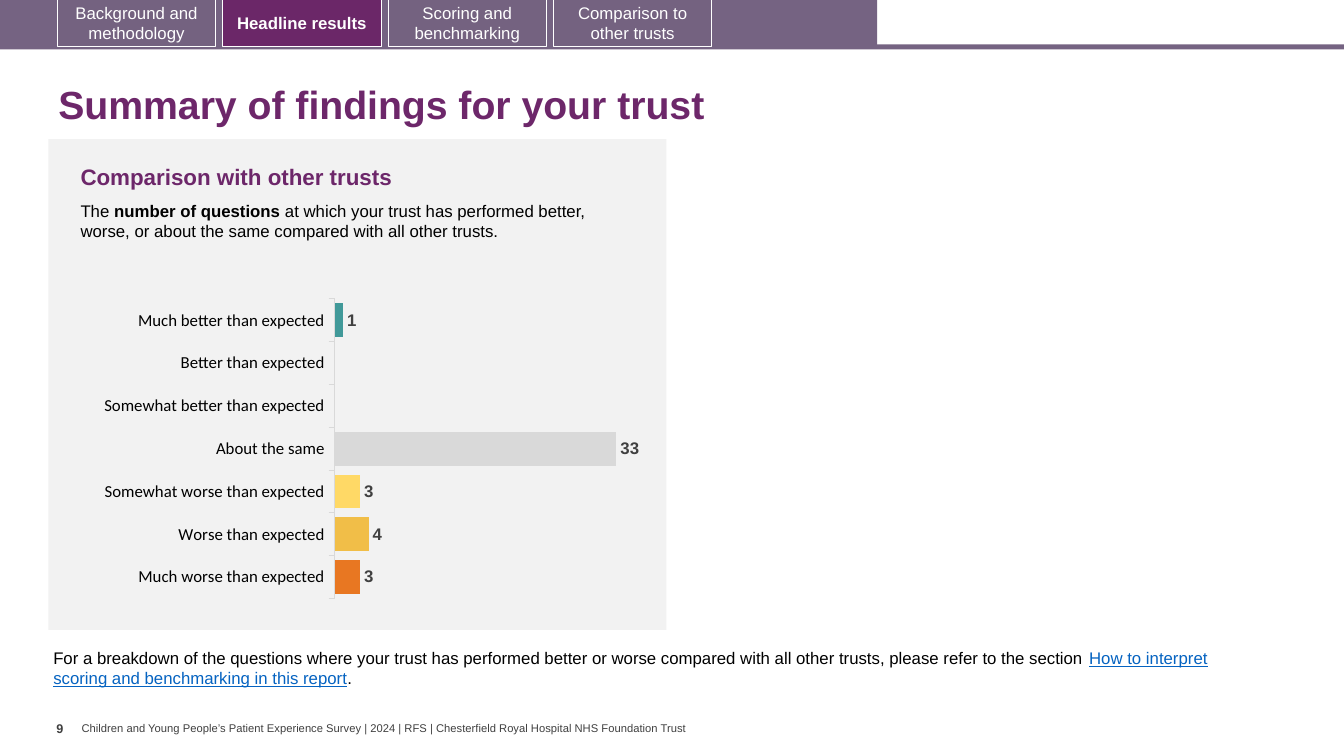
from dataclasses import dataclass

from lxml.etree import SubElement
from pptx import Presentation
from pptx.chart.data import CategoryChartData
from pptx.dml.color import RGBColor
from pptx.enum.chart import XL_CHART_TYPE, XL_LABEL_POSITION, XL_TICK_LABEL_POSITION, XL_TICK_MARK
from pptx.enum.shapes import MSO_SHAPE
from pptx.enum.text import MSO_ANCHOR, PP_ALIGN
from pptx.oxml.ns import qn
from pptx.util import Inches, Pt


@dataclass(frozen=True)
class Theme:
    font: str = "Arial"
    chart_font: str = "Calibri"
    title: int = 28
    heading: int = 16
    body: int = 12
    page: int = 9
    footer: int = 8
    purple: str = "6D276A"
    band: str = "756382"
    tab: str = "746280"
    active_tab: str = "6B2768"
    panel: str = "F2F2F2"
    white: str = "FFFFFF"
    black: str = "000000"
    grey: str = "404040"
    axis: str = "D9D9D9"
    link: str = "0563C1"


T = Theme()

TABS = ["Background and methodology", "Headline results",
        "Scoring and benchmarking", "Comparison to other trusts"]
ACTIVE_TAB = "Headline results"

RESULTS = [
    ("Much better than expected", 1, "419999"),
    ("Better than expected", None, "5FBD83"),
    ("Somewhat better than expected", None, "A9D18E"),
    ("About the same", 33, "D9D9D9"),
    ("Somewhat worse than expected", 3, "FFD966"),
    ("Worse than expected", 4, "F1BE48"),
    ("Much worse than expected", 3, "E87722"),
]


def rgb(code):
    return RGBColor.from_string(code)


def set_font(font, size, color=T.black, name=T.font, **more):
    for key, value in dict(size=Pt(size), name=name, **more).items():
        setattr(font, key, value)
    font.color.rgb = rgb(color)


def write(tf, runs, size, color=T.black, **frame):
    """Fill a frame with one paragraph of (text, font values) runs."""
    for key, value in dict(word_wrap=True, **frame).items():
        setattr(tf, key, value)
    p = tf.paragraphs[0]
    for text, values in runs:
        r = p.add_run()
        r.text = text
        set_font(r.font, size, **{"color": color, **values})
    return p


def add_text(s, box, runs, size, color=T.black, **frame):
    tb = s.shapes.add_textbox(*map(Inches, box))
    return write(tb.text_frame, runs, size, color, **frame)


def add_rect(s, box, fill, line=None):
    sp = s.shapes.add_shape(MSO_SHAPE.RECTANGLE, *map(Inches, box))
    sp.shadow.inherit = False
    sp.fill.solid()
    sp.fill.fore_color.rgb = rgb(fill)
    if line:
        sp.line.color.rgb = rgb(line)
        sp.line.width = Pt(0.75)
    else:
        sp.line.fill.background()
    return sp


def add_navigation(s, x, y, w, h):
    add_rect(s, (x, y + h - 0.05, w, 0.05), T.band)
    add_rect(s, (x, y, 8.7, 0.47), T.band)
    for i, label in enumerate(TABS):
        active = label == ACTIVE_TAB
        tab = add_rect(s, (x + 0.57 + 1.64 * i, y - 0.01, 1.57, 0.47),
                       T.active_tab if active else T.tab, T.white)
        p = write(tab.text_frame, [(label, {"bold": active})], T.body, T.white,
                  vertical_anchor=MSO_ANCHOR.MIDDLE)
        p.alignment = PP_ALIGN.CENTER


def add_title(s, box):
    p = add_text(s, box, [("Summary of findings for your trust", {"bold": True})],
                 T.title, T.purple, vertical_anchor=MSO_ANCHOR.MIDDLE)
    p.line_spacing = 0.9


def set_plot_layout(chart, **fractions):
    """Place the inner plot area by fractions of the chart."""
    area = chart._chartSpace.chart.plotArea
    for old in area.findall(qn("c:layout")):
        area.remove(old)
    layout = SubElement(area, qn("c:layout"))
    area.insert(0, layout)
    manual = SubElement(layout, qn("c:manualLayout"))
    values = {"layoutTarget": "inner", "xMode": "edge", "yMode": "edge", **fractions}
    for tag, value in values.items():
        SubElement(manual, qn(f"c:{tag}")).set("val", str(value))


def add_results_chart(s, box):
    data = CategoryChartData()
    data.categories = [name for name, _, _ in RESULTS]
    data.add_series("Series 1", [value for _, value, _ in RESULTS])
    chart = s.shapes.add_chart(XL_CHART_TYPE.BAR_CLUSTERED, *map(Inches, box), data).chart
    chart.has_legend = False
    chart.has_title = False
    set_font(chart.font, 10, name=T.chart_font)
    set_plot_layout(chart, x=0.467, y=0.072, w=0.476, h=0.872)

    cat = chart.category_axis
    cat.reverse_order = True
    cat.major_tick_mark = XL_TICK_MARK.OUTSIDE
    cat.tick_label_position = XL_TICK_LABEL_POSITION.LOW
    cat.format.line.color.rgb = rgb(T.axis)
    cat.format.line.width = Pt(0.75)
    set_font(cat.tick_labels.font, T.body, name=T.chart_font)

    val = chart.value_axis
    for key, value in dict(visible=False, has_major_gridlines=False,
                           minimum_scale=0, maximum_scale=35).items():
        setattr(val, key, value)

    plot = chart.plots[0]
    plot.gap_width = 27
    plot.vary_by_categories = False
    series = plot.series[0]
    series.invert_if_negative = False
    for i, (_, _, color) in enumerate(RESULTS):
        fill = series.points[i].format.fill
        fill.solid()
        fill.fore_color.rgb = rgb(color)
    labels = series.data_labels
    labels.show_value = True
    labels.position = XL_LABEL_POSITION.OUTSIDE_END
    set_font(labels.font, T.body, T.grey, bold=True)


def add_comparison_panel(s, x, y, w, h):
    add_rect(s, (x, y, w, h), T.panel)
    add_text(s, (x + 0.22, y + 0.19, 5.52, 0.37),
             [("Comparison with other trusts", {"bold": True})], T.heading, T.purple)
    add_text(s, (x + 0.22, y + 0.56, 5.29, 0.71), [
        ("The ", {}),
        ("number of questions ", {"bold": True}),
        ("at which your trust has performed better, worse, or about the same "
         "compared with all other trusts.", {}),
    ], T.body)
    add_results_chart(s, (x - 0.07, y + 1.34, w + 0.1, 3.41))


def add_reference(s, box):
    add_text(s, box, [
        ("For a breakdown of the questions where your trust has performed better or worse "
         "compared with all other trusts, please refer to the section ", {}),
        ("How to interpret scoring and benchmarking in this report",
         {"color": T.link, "underline": True}),
        (".", {}),
    ], T.body)


def add_footer(s, x, y):
    add_text(s, (x, y, 0.25, 0.4), [("9", {"bold": True})], T.page, T.grey,
             margin_left=0, margin_right=0)
    add_text(s, (x + 0.25, y + 0.06, 6.09, 0.13),
             [("Children and Young People’s Patient Experience Survey | 2024 | RFS | "
               "Chesterfield Royal Hospital NHS Foundation Trust", {})],
             T.footer, T.grey, vertical_anchor=MSO_ANCHOR.MIDDLE,
             margin_left=0, margin_right=0, margin_top=0, margin_bottom=0)


def main():
    prs = Presentation()
    prs.slide_width, prs.slide_height = Inches(13.33), Inches(7.5)
    s = prs.slides.add_slide(prs.slide_layouts[6])
    add_navigation(s, 0, 0, 13.33, 0.49)
    add_title(s, (0.48, 0.7, 12.49, 0.72))
    add_comparison_panel(s, 0.48, 1.38, 6.13, 4.87)
    add_reference(s, (0.43, 6.38, 12.21, 0.5))
    add_footer(s, 0.56, 7.1)
    prs.save("out.pptx")


if __name__ == "__main__":
    main()
